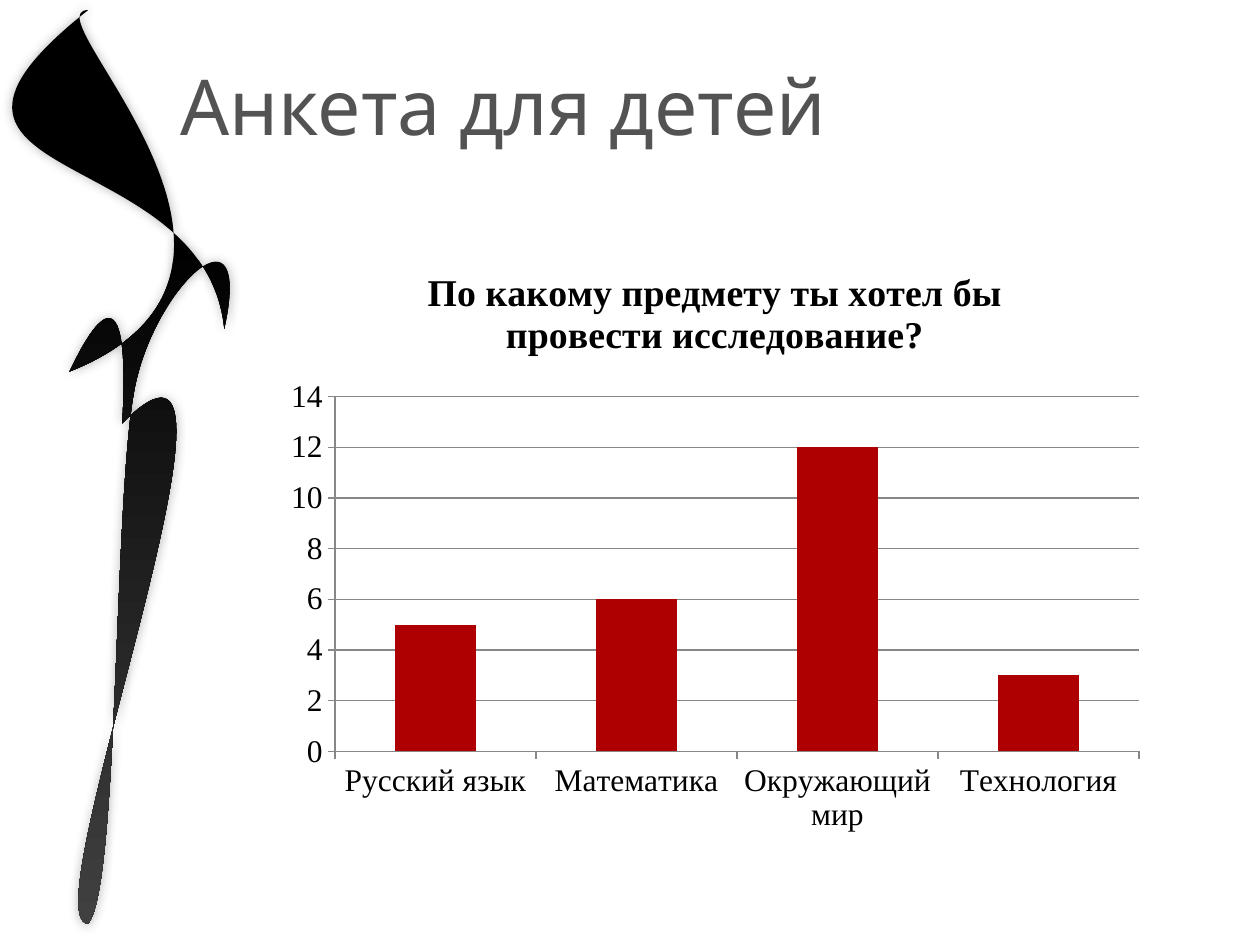
from lxml.etree import SubElement
from pptx import Presentation
from pptx.chart.data import CategoryChartData
from pptx.dml.color import RGBColor
from pptx.enum.chart import XL_CHART_TYPE, XL_TICK_MARK
from pptx.enum.text import MSO_ANCHOR, PP_ALIGN
from pptx.oxml.ns import qn
from pptx.util import Inches, Pt

BLACK = RGBColor(0x00, 0x00, 0x00)
CHARCOAL = RGBColor(0x40, 0x40, 0x40)
TITLE_GRAY = RGBColor(0x53, 0x53, 0x53)
AXIS_GRAY = RGBColor(0x87, 0x87, 0x87)
BAR_RED = RGBColor(0xAE, 0x00, 0x00)

QUESTION = "По какому предмету ты хотел бы провести исследование?"
ANSWERS = {"Русский язык": 5, "Математика": 6, "Окружающий мир": 12, "Технология": 3}

# Bézier curves of the ribbon in inches: two control points and an end point
RIBBON_START = (0.97, 3.36)
RIBBON_CURVES = [
    ((1.06, 1.76), (0.56, 2.95), (0.55, 2.95)),
    ((2.57, 2.15), (0.21, 0.08), (0.70, 0.08)),
    ((-1.08, 1.49), (1.63, 1.11), (1.78, 2.61)),
    ((2.01, 1.57), (1.26, 2.24), (1.08, 3.03)),
    ((0.90, 3.81), (0.95, 7.04), (0.70, 7.33)),
    ((0.21, 7.33), (2.25, 2.07), (0.97, 3.36)),
]


def write_text(frame, text, *, size, font, color, bold=False, align=PP_ALIGN.LEFT):
    paragraph = frame.paragraphs[0]
    paragraph.alignment = align
    run = paragraph.add_run()
    run.text = text
    run.font.size = Pt(size)
    run.font.name = font
    run.font.bold = bold
    run.font.color.rgb = color


def bend_segments(shape):
    """Turn every three line segments of a freeform into one Bézier curve."""
    outline = next(shape.element.iter(qn("a:path")))
    segments = outline.findall(qn("a:lnTo"))
    for index in range(0, len(segments), 3):
        curve = SubElement(outline, qn("a:cubicBezTo"))
        segments[index].addprevious(curve)
        for segment in segments[index:index + 3]:
            curve.append(segment[0])
            outline.remove(segment)


presentation = Presentation()
presentation.slide_width = Inches(10)
presentation.slide_height = Inches(7.5)
slide = presentation.slides.add_slide(presentation.slide_layouts[5])

# Title
title = slide.shapes.title
title.left, title.top = Inches(1.33), Inches(0.08)
title.width, title.height = Inches(7.44), Inches(1.5)
title.text_frame.vertical_anchor = MSO_ANCHOR.MIDDLE
write_text(title.text_frame, "Анкета для детей", size=44, font="Karla", color=TITLE_GRAY)

# Ribbon behind the title
builder = slide.shapes.build_freeform(*(Inches(value) for value in RIBBON_START))
builder.add_line_segments(
    [(Inches(x), Inches(y)) for curve in RIBBON_CURVES for x, y in curve], close=True
)
ribbon = builder.convert_to_shape()
bend_segments(ribbon)
title.element.addprevious(ribbon.element)
ribbon.line.fill.background()
ribbon.fill.gradient()
ribbon.fill.gradient_angle = 270
for stop, position, color in zip(ribbon.fill.gradient_stops, (0.25, 1), (BLACK, CHARCOAL)):
    stop.position = position
    stop.color.rgb = color

ribbon.shadow.inherit = False
effects = ribbon.element.spPr.find(qn("a:effectLst"))
shadow = SubElement(effects, qn("a:outerShdw"), blurRad=str(Pt(6)), dist="0", dir="0")
shadow_color = SubElement(shadow, qn("a:srgbClr"), val=str(CHARCOAL))
SubElement(shadow_color, qn("a:alpha"), val="40000")

# Chart
chart_data = CategoryChartData()
chart_data.categories = list(ANSWERS)
chart_data.add_series(QUESTION, list(ANSWERS.values()))
chart = slide.shapes.add_chart(
    XL_CHART_TYPE.COLUMN_CLUSTERED,
    Inches(2.17), Inches(1.92), Inches(7.01), Inches(4.78), chart_data,
).chart
chart.has_legend = False
chart.font.size = Pt(18)
chart.font.name = "Times New Roman"
chart.font.color.rgb = BLACK
chart.has_title = True
write_text(chart.chart_title.text_frame, QUESTION, size=21.6, font="Times New Roman",
           color=BLACK, bold=True, align=PP_ALIGN.CENTER)
chart.chart_title.include_in_layout = False

plot = chart.plots[0]
plot.gap_width = 150
plot.vary_by_categories = False
bars = plot.series[0].format.fill
bars.solid()
bars.fore_color.rgb = BAR_RED

value_axis = chart.value_axis
value_axis.minimum_scale = 0
value_axis.maximum_scale = 14
value_axis.major_unit = 2
value_axis.has_major_gridlines = True
for axis in (chart.category_axis, value_axis):
    axis.major_tick_mark = XL_TICK_MARK.OUTSIDE
for part in (chart.category_axis, value_axis, value_axis.major_gridlines):
    part.format.line.color.rgb = AXIS_GRAY

presentation.save("out.pptx")
